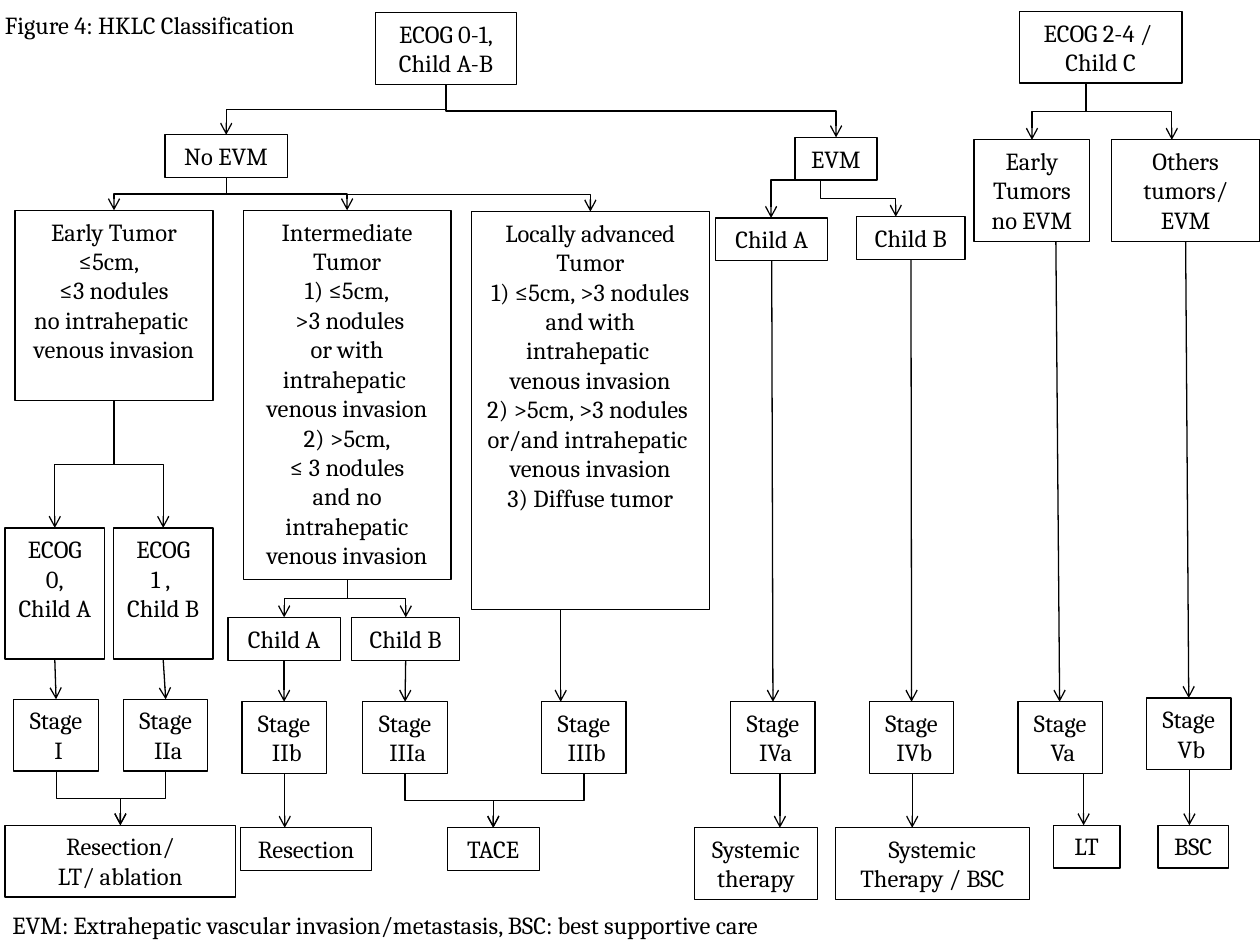
from dataclasses import dataclass

from pptx import Presentation
from pptx.dml.color import RGBColor
from pptx.enum.shapes import MSO_CONNECTOR
from pptx.enum.text import MSO_AUTO_SIZE, PP_ALIGN
from pptx.oxml.ns import qn
from pptx.util import Inches, Pt
from lxml.etree import SubElement


@dataclass(frozen=True)
class Theme:
    font: str = "Cambria"
    size: float = 14
    ink: RGBColor = RGBColor(0, 0, 0)
    line: float = 0.75


THEME = Theme()
WIDTH, HEIGHT = Inches(10), Inches(7.5)
COLS, ROWS = 100, 75
ONE, TWO, THREE = 3.4, 5.7, 8.1  # box heights, by lines of text
STAGE_W = 6.7

# name: (column, row, columns wide, rows high, text, wraps)
BOXES = {
    "ecog01": (29.8, 1, 11.2, TWO, "ECOG 0-1,\nChild A-B", False),
    "ecog24": (80.9, 0.9, 12.9, TWO, "ECOG 2-4 / \nChild C", False),
    "no_evm": (13.1, 10.7, 9.7, ONE, "No EVM", False),
    "evm": (63.1, 10.9, 6.5, ONE, "EVM", False),
    "early": (1.2, 16.7, 15.7, 15.1,
              "Early Tumor\n≤5cm,  \n≤3 nodules\nno intrahepatic \nvenous invasion", True),
    "intermediate": (19.3, 16.7, 16.5, 29.3,
                     "Intermediate\nTumor\n1) ≤5cm,\n >3 nodules\nor with intrahepatic \n"
                     "venous invasion\n2) >5cm,\n≤ 3 nodules\nand no intrahepatic\n"
                     "venous invasion", True),
    "advanced": (37.4, 16.8, 18.9, 31.6,
                 "Locally advanced\nTumor\n1) ≤5cm, >3 nodules\nand with intrahepatic \n"
                 "venous invasion\n2) >5cm, >3 nodules \nor/and intrahepatic \n"
                 "venous invasion\n3) Diffuse tumor", True),
    "others": (88.2, 11.1, 11.8, THREE, "Others\ntumors/\nEVM", True),
    "early_no_evm": (77.3, 11.1, 9.2, THREE, "Early\nTumors\nno EVM", False),
    "evm_a": (56.8, 17.3, 8.9, ONE, "Child A", False),
    "evm_b": (68, 17.2, 8.6, ONE, "Child B", False),
    "inter_a": (18.1, 49, 8.9, ONE, "Child A", False),
    "inter_b": (27.9, 49, 8.6, ONE, "Child B", False),
    "ecog1": (9, 41.9, 7.9, 10.4, "ECOG 1 , \nChild B", True),
    "ecog0": (0.4, 41.9, 7.9, 10.4, "ECOG 0,\nChild A", True),
    "resection_lt": (0.4, 65.5, 18.3, TWO, "Resection/\nLT/ ablation", True),
    "resection": (19.1, 65.7, 10.4, ONE, "Resection", False),
    "tace": (35.5, 65.7, 7.3, ONE, "TACE", False),
    "systemic": (55.1, 65.7, 9.8, TWO, "Systemic\ntherapy", False),
    "systemic_bsc": (66.3, 65.7, 15.4, TWO, "Systemic\nTherapy / BSC", True),
    "lt": (83.6, 65.5, 5.3, ONE, "LT", True),
    "bsc": (91.9, 65.5, 5.6, ONE, "BSC", False),
}
STAGES = {"I": (1.1, 55.5), "IIa": (9.8, 55.5), "IIb": (19.2, 55.7),
          "IIIa": (28.8, 55.7), "IIIb": (43, 55.7), "IVa": (58, 55.7),
          "IVb": (69, 55.7), "Va": (80.8, 55.7), "Vb": (91, 55.4)}
BOXES.update({stage: (x, y, STAGE_W, TWO, f"Stage\n {stage}", False)
              for stage, (x, y) in STAGES.items()})

# from, to, then the columns where an arrow leaves the centre of its boxes
LINKS = [
    ("ecog01", "no_evm"), ("ecog01", "evm"),
    ("no_evm", "early"), ("no_evm", "intermediate"), ("no_evm", "advanced"),
    ("evm", "evm_b", 65.1, 71.1),
    ("early", "ecog0"), ("early", "ecog1"),
    ("intermediate", "inter_a"), ("intermediate", "inter_b"),
    ("ecog0", "I"), ("ecog1", "IIa"), ("inter_a", "IIb"), ("inter_b", "IIIa"),
    ("evm_a", "IVa"), ("evm_b", "IVb"),
    ("early_no_evm", "Va", 83.8, 84.1), ("others", "Vb"),
    ("I", "resection_lt"), ("IIa", "resection_lt"),
    ("IIb", "resection", 22.6, 22.6), ("IIIa", "tace"), ("IIIb", "tace"),
    ("ecog24", "early_no_evm", 86.2, 81.9), ("ecog24", "others", 86.2, 93),
    ("advanced", "IIIb", 44.5, 44.5), ("IVb", "systemic_bsc", 72.4, 72.4),
    ("IVa", "systemic", 61.9, 61.9), ("Vb", "bsc", 94.4, 94.4), ("Va", "lt", 86, 86),
]


def col(n):
    return round(WIDTH * n / COLS)


def row(n):
    return round(HEIGHT * n / ROWS)


def add_text(s, x, y, w, h, text, align=None, wrap=True, border=False):
    sp = s.shapes.add_textbox(col(x), row(y), col(w), row(h))
    if border:
        sp.line.color.rgb = THEME.ink
        sp.line.width = Pt(THEME.line)
    tf = sp.text_frame
    tf.word_wrap = wrap
    tf.auto_size = MSO_AUTO_SIZE.SHAPE_TO_FIT_TEXT
    for i, words in enumerate(text.split("\n")):
        p = tf.paragraphs[0] if i == 0 else tf.add_paragraph()
        p.alignment = align
        r = p.add_run()
        r.text = words
        r.font.name, r.font.size = THEME.font, Pt(THEME.size)
        r.font.color.rgb = THEME.ink


def add_arrow(s, kind, x1, y1, x2, y2):
    c = s.shapes.add_connector(kind, col(x1), row(y1), col(x2), row(y2))
    c.line.color.rgb = THEME.ink
    c.line.width = Pt(THEME.line)
    SubElement(c.line._get_or_add_ln(), qn("a:tailEnd"), type="arrow")
    SubElement(c._element.spPr, qn("a:effectLst"))
    return c


def add_fork(s, x1, y1, x2, y2):
    """Arrow that goes down, across and down: an elbow turned by a quarter."""
    cx, cy = (x1 + x2) / 2, (y1 + y2) / 2
    dx, dy = abs(x2 - x1) / 2, (y2 - y1) / 2
    c = add_arrow(s, MSO_CONNECTOR.ELBOW, cx - dy, cy - dx, cx + dy, cy + dx)
    xfrm = c._element.spPr.find(qn("a:xfrm"))
    xfrm.set("rot", str((270 if x2 > x1 else 90) * 60000))
    if x2 > x1:
        xfrm.set("flipH", "1")


def add_corner(s, x1, y1, x2, y2):
    """Arrow that goes across, then down."""
    c = add_arrow(s, MSO_CONNECTOR.ELBOW, x1, y1, x2, y2)
    c._element.spPr.find(qn("a:prstGeom")).set("prst", "bentConnector2")


def link(s, start, end, x1=None, x2=None):
    ax, ay, aw, ah = BOXES[start][:4]
    bx, by, bw = BOXES[end][:3]
    x1 = ax + aw / 2 if x1 is None else x1
    x2 = bx + bw / 2 if x2 is None else x2
    if abs(x2 - x1) < 1:
        add_arrow(s, MSO_CONNECTOR.STRAIGHT, x1, ay + ah, x2, by)
    else:
        add_fork(s, x1, ay + ah, x2, by)


def main():
    prs = Presentation()
    prs.slide_width, prs.slide_height = WIDTH, HEIGHT
    s = prs.slides.add_slide(prs.slide_layouts[6])
    for x, y, w, h, text, wrap in BOXES.values():
        add_text(s, x, y, w, h, text, align=PP_ALIGN.CENTER, wrap=wrap, border=True)
    for ends in LINKS:
        link(s, *ends)
    add_corner(s, 65, 14.3, 61.2, 17.3)
    add_text(s, -0.6, 0.3, 29.5, ONE, "Figure 4: HKLC Classification")
    add_text(s, 0, 71.7, COLS, ONE,
             "EVM: Extrahepatic vascular invasion/metastasis, BSC: best supportive care")
    prs.save("out.pptx")


if __name__ == "__main__":
    main()
